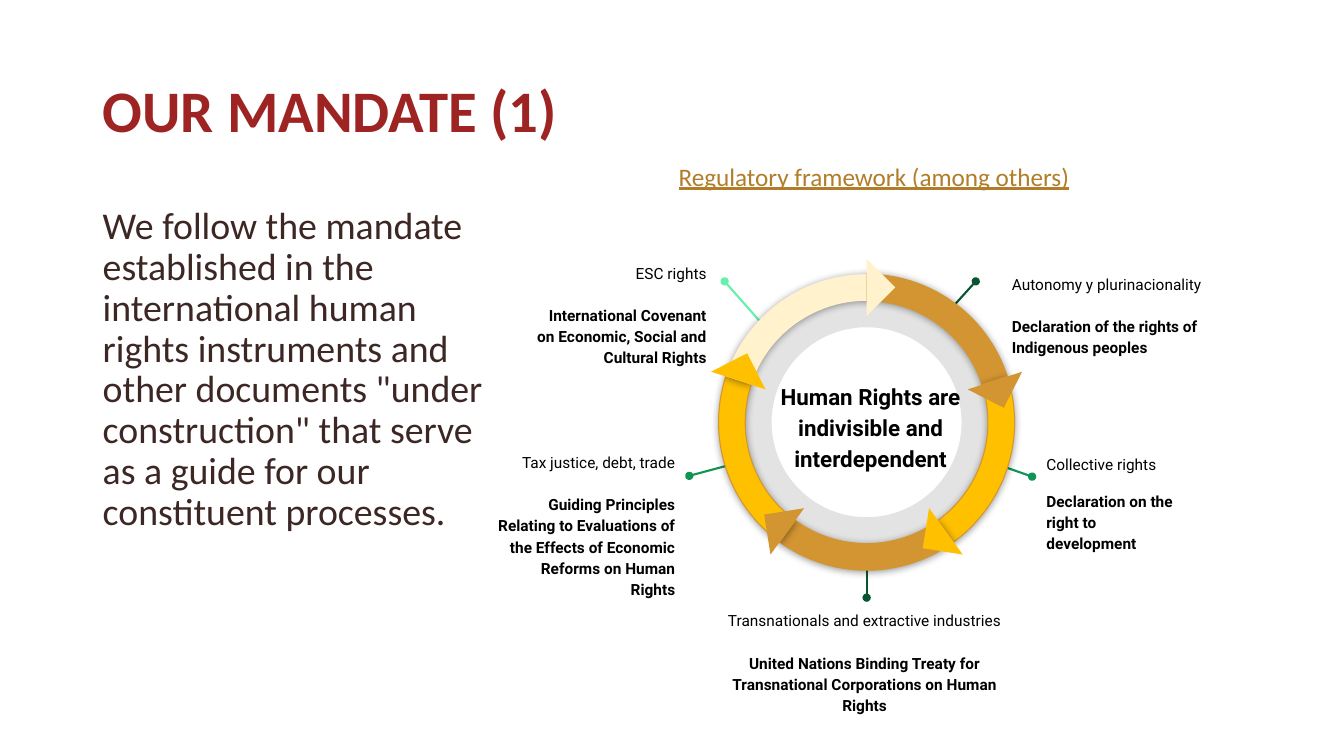
from math import cos, radians, sin

from lxml import etree
from pptx import Presentation
from pptx import util as u
from pptx.dml.color import RGBColor
from pptx.enum import shapes as sh, text as tx
from pptx.oxml.ns import qn

# Colours
RED = RGBColor(0x9E, 0x23, 0x23)
BROWN = RGBColor(0x3C, 0x27, 0x24)
OCHRE = RGBColor(0xB1, 0x7D, 0x29)
TAN = RGBColor(0xD3, 0x95, 0x32)
GOLD = RGBColor(0xFF, 0xC0, 0x00)
CREAM = RGBColor(0xFF, 0xF2, 0xCC)
GREY = RGBColor(0xE3, 0xE3, 0xE3)
BLACK = RGBColor(0, 0, 0)
DARK = RGBColor(0x08, 0x56, 0x31)
GREEN = RGBColor(0x0E, 0x94, 0x53)
MINT = RGBColor(0x65, 0xF0, 0xAD)

LEFT, MID, RIGHT = tx.PP_ALIGN.LEFT, tx.PP_ALIGN.CENTER, tx.PP_ALIGN.RIGHT

# Content (lengths in cm)
TITLE = "OUR MANDATE (1)"
BODY = ("We follow the mandate established in the international human rights "
        'instruments and other documents "under construction" that serve as a '
        "guide for our constituent processes.")
HEAD = "Regulatory framework (among others)"
CORE = "Human Rights are indivisible and interdependent"

# Topic, instrument, box, alignment, gap in points, dot, line end, line colour
LABELS = [
    ("Autonomy y plurinacionality",
     "Declaration of the rights of Indigenous peoples",
     (25.17, 6.53, 6.99, 1.85), LEFT, 15, (24.59, 7.09), (23.65, 8.13), DARK),
    ("ESC rights",
     "International Covenant on Economic, Social and Cultural Rights",
     (13.11, 6.25, 5.03, 1.85), RIGHT, 15, (18.26, 7.09), (19.18, 8.13), MINT),
    ("Collective rights",
     "Declaration on the right to development",
     (26.04, 11.07, 4.17, 1.85), LEFT, 11, (26.01, 12.01), (24.79, 11.58), GREEN),
    ("Tax justice, debt, trade",
     "Guiding Principles Relating to Evaluations of the Effects of "
     "Economic Reforms on Human Rights",
     (12.22, 11.02, 5.13, 1.85), RIGHT, 15, (17.37, 11.99), (18.9, 11.58), GREEN),
    ("Transnationals and extractive industries",
     "United Nations Binding Treaty for Transnational Corporations on Human Rights",
     (17.83, 15.01, 7.92, 1.85), MID, 15, (21.84, 15.06), (21.84, 13.72), DARK),
]

# Cycle, clockwise from the top
CYCLE = [TAN, GOLD, TAN, GOLD, CREAM]
HUB = (21.84, 10.64)
ARC, DISC, TRACK, TIP = 3.73, 3.53, 3.4, 1.02  # three radii, arrowhead side
STEP = 360 / len(CYCLE)

deck = Presentation()
deck.slide_width, deck.slide_height = u.Cm(33.87), u.Cm(19.05)
slide = deck.slides.add_slide(deck.slide_layouts[5])


def assign(item, **values):
    for key, value in values.items():
        setattr(item, key, value)


def write(box, lines, inset=(0.33, 0.33), anchor=tx.MSO_ANCHOR.TOP,
          align=LEFT, space=1.15, gap=0, color=BLACK, **font):
    """Fill a text shape; each line is a text and its bold flag."""
    frame = box.text_frame
    side, edge = map(u.Cm, inset)
    assign(frame, word_wrap=True, auto_size=tx.MSO_AUTO_SIZE.NONE,
           vertical_anchor=anchor, margin_left=side, margin_right=side,
           margin_top=edge, margin_bottom=edge)
    for i, (words, bold) in enumerate(lines):
        para = frame.add_paragraph() if i else frame.paragraphs[0]
        assign(para, alignment=align, line_spacing=space,
               space_before=u.Pt(gap if i else 0))
        run = para.add_run()
        run.text = words
        assign(run.font, bold=bold, **font)
        run.font.color.rgb = color


def textbox(place, lines, **style):
    write(slide.shapes.add_textbox(*map(u.Cm, place)), lines, **style)


def shape(kind, hub, size, fill, line=None):
    """Add a square preset shape centred on hub."""
    place = (hub[0] - size / 2, hub[1] - size / 2, size, size)
    item = slide.shapes.add_shape(kind, *map(u.Cm, place))
    item.shadow.inherit = False
    item.fill.solid()
    item.fill.fore_color.rgb = fill
    if line is None:
        item.line.fill.background()
    else:
        item.line.color.rgb = line
        item.line.width = u.Pt(0.75)
    return item


def effects(item):
    props = item._element.spPr
    found = props.find(qn("a:effectLst"))
    return etree.SubElement(props, qn("a:effectLst")) if found is None else found


def shade(item):
    cast = etree.SubElement(effects(item), qn("a:outerShdw"), blurRad="71120",
                            dist="10160", dir="5400000", rotWithShape="0")
    tone = etree.SubElement(cast, qn("a:srgbClr"), val="000000")
    etree.SubElement(tone, qn("a:alpha"), val="40000")


# Title, body and heading
title = slide.shapes.title
assign(title, left=u.Cm(2.34), top=u.Cm(1.02), width=u.Cm(29.21), height=u.Cm(3.68))
write(title, [(TITLE, True)], inset=(0.25, 0.13), anchor=tx.MSO_ANCHOR.MIDDLE,
      space=0.9, color=RED, name="Calibri", size=u.Pt(42))
textbox((2.34, 5.08, 10.36, 12.09), [(BODY, False)], inset=(0.25, 0.13),
        space=0.9, color=BROWN, name="Calibri", size=u.Pt(27))
textbox((16.41, 3.89, 11.23, 2.03), [(HEAD, False)], inset=(0.25, 0.25), align=MID,
        space=0.9, color=OCHRE, name="Calibri", size=u.Pt(18), underline=True)

# Grey ring
ring = shape(sh.MSO_SHAPE.DONUT, HUB, 2 * DISC, GREY)
ring.adjustments[0] = 0.161

# Labels with their pointers
for topic, paper, place, align, gap, dot, end, color in LABELS:
    rule = slide.shapes.add_connector(sh.MSO_CONNECTOR.STRAIGHT,
                                      *map(u.Cm, dot + end))
    rule.line.color.rgb = color
    rule.line.width = u.Pt(1.5)
    etree.SubElement(rule.line._get_or_add_ln(), qn("a:headEnd"), type="oval")
    effects(rule)
    textbox(place, [(topic, False), (paper, True)], align=align, gap=gap,
            name="Roboto", size=u.Pt(11))

# Arcs: angles run clockwise from the right, in units of 5/3 degree
for i, color in enumerate(CYCLE):
    start = (270 + i * STEP) % 360
    arc = shape(sh.MSO_SHAPE.BLOCK_ARC, HUB, 2 * ARC, color,
                None if color == CREAM else TAN)
    for j, value in enumerate((start * 0.6, (start + STEP) % 360 * 0.6, 0.09)):
        arc.adjustments[j] = value
    shade(arc)

# Arrowheads at the end of each arc
for i, color in enumerate(CYCLE, 1):
    turn = radians(270 + i * STEP)
    spot = (HUB[0] + TRACK * cos(turn), HUB[1] + TRACK * sin(turn))
    tip = shape(sh.MSO_SHAPE.RIGHT_TRIANGLE, spot, TIP, color)
    tip.rotation = (225 + i * STEP) % 360

# Core message
textbox((19.3, 9.6, 5.28, 2.24), [(CORE, True)], anchor=tx.MSO_ANCHOR.MIDDLE,
        align=MID, name="Roboto", size=u.Pt(16))

deck.save("out.pptx")
